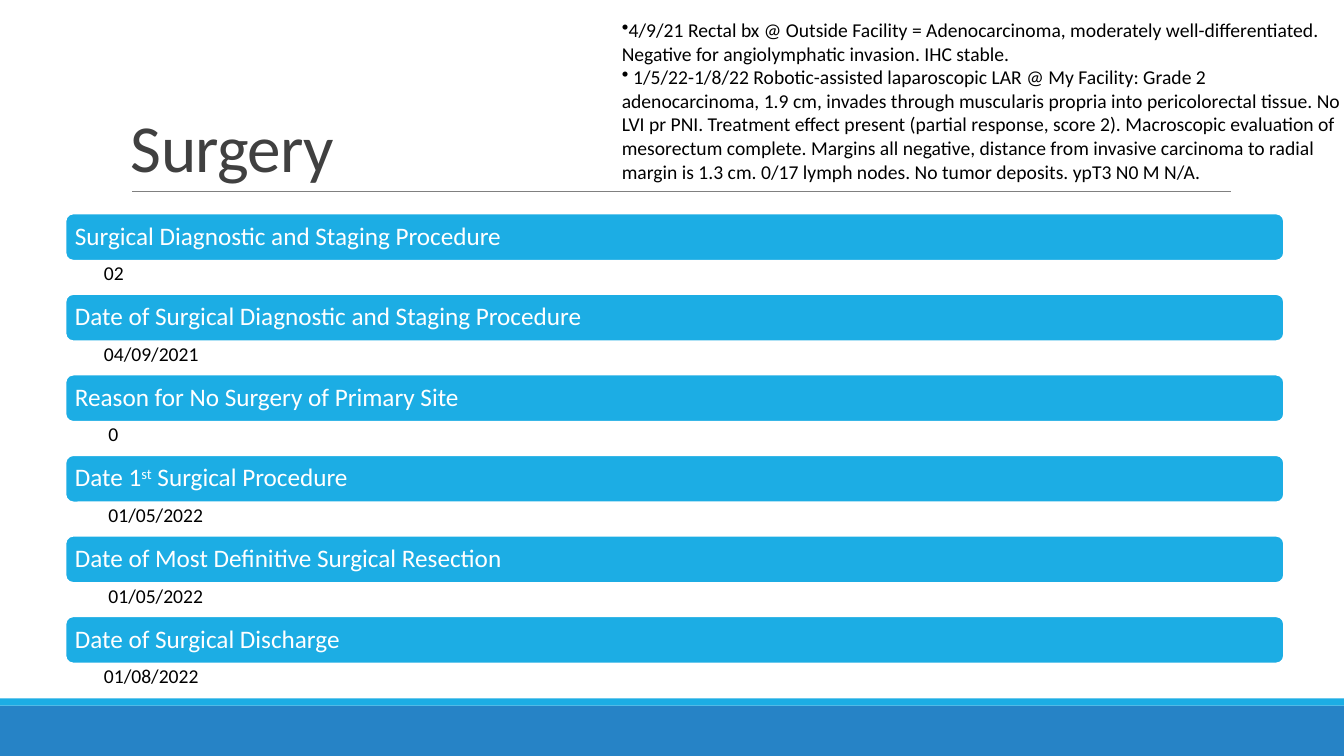
from pptx import Presentation
from pptx.dml.color import RGBColor
from pptx.enum.shapes import MSO_CONNECTOR as Connector, MSO_SHAPE as Preset
from pptx.enum.text import MSO_ANCHOR as Anchor, MSO_AUTO_SIZE as AutoSize, PP_ALIGN as Align
from pptx.oxml.ns import qn
from pptx.util import Cm, Pt
from lxml.etree import SubElement

SKY, BLUE, WHITE, BLACK = "1CADE4", "2683C6", "FFFFFF", "000000"
DARK_GREY, RULE_GREY = "404040", "808080"

# Each entry: heading, value; a heading in pieces alternates normal and superscript
FIELDS = [
    (["Surgical Diagnostic and Staging Procedure"], "02"),
    (["Date of Surgical Diagnostic and Staging Procedure"], "04/09/2021"),
    (["Reason for No Surgery of Primary Site"], " 0"),
    (["Date 1", "st", " Surgical Procedure"], " 01/05/2022"),
    (["Date of Most Definitive Surgical Resection"], " 01/05/2022"),
    (["Date of Surgical Discharge"], "01/08/2022"),
]
FINDINGS = [
    "4/9/21 Rectal bx @ Outside Facility = Adenocarcinoma, moderately well-differentiated. "
    "Negative for angiolymphatic invasion. IHC stable.",
    " 1/5/22-1/8/22 Robotic-assisted laparoscopic LAR @ My Facility: Grade 2 adenocarcinoma, "
    "1.9 cm, invades through muscularis propria into pericolorectal tissue. No LVI pr PNI. "
    "Treatment effect present (partial response, score 2). Macroscopic evaluation of mesorectum "
    "complete. Margins all negative, distance from invasive carcinoma to radial margin is 1.3 cm. "
    "0/17 lymph nodes. No tumor deposits. ypT3 N0 M N/A.",
]

FIELD_LEFT, FIELD_TOP, FIELD_WIDTH = 1.65, 5.38, 30.71
BAR_HEIGHT, VALUE_HEIGHT = 1.19, 0.84
FIELD_PITCH = BAR_HEIGHT + VALUE_HEIGHT


def rgb(hex_colour):
    return RGBColor.from_string(hex_colour)


def apply(target, formats):
    for attribute, value in formats.items():
        setattr(target, attribute, value)


def set_frame(frame, margins=(0.25, 0.13, 0.25, 0.13), anchor=Anchor.TOP):
    left, top, right, bottom = map(Cm, margins)
    apply(frame, {
        "word_wrap": True, "auto_size": AutoSize.NONE, "vertical_anchor": anchor,
        "margin_left": left, "margin_top": top,
        "margin_right": right, "margin_bottom": bottom,
    })


def add_text(paragraph, text, size, colour):
    run = paragraph.add_run()
    run.text = text
    apply(run.font, {"name": "Calibri", "size": Pt(size)})
    run.font.color.rgb = rgb(colour)
    return run


def add_block(slide, preset, box, fill, outline=None):
    block = slide.shapes.add_shape(preset, *map(Cm, box))
    block.shadow.inherit = False
    block.fill.solid()
    block.fill.fore_color.rgb = rgb(fill)
    if outline:
        block.line.color.rgb = rgb(outline)
        block.line.width = Pt(1.25)
    else:
        block.line.fill.background()
    return block


def add_rule(slide, left, right, height):
    rule = slide.shapes.add_connector(
        Connector.STRAIGHT, Cm(left), Cm(height), Cm(right), Cm(height))
    rule.line.color.rgb = rgb(RULE_GREY)
    rule.line.width = Pt(0.5)
    SubElement(rule._element.spPr, qn("a:effectLst"))


def set_title(slide, text):
    title = slide.shapes.title
    apply(title, {"left": Cm(3.05), "top": Cm(0.79), "width": Cm(27.94), "height": Cm(4.04)})
    set_frame(title.text_frame, anchor=Anchor.BOTTOM)
    paragraph = title.text_frame.paragraphs[0]
    apply(paragraph, {"alignment": Align.LEFT, "line_spacing": 0.85})
    run = add_text(paragraph, text, 48, DARK_GREY)
    run._r.get_or_add_rPr().set("spc", "-50")


def add_field(slide, top, heading, value):
    # Heading bar
    bar = add_block(slide, Preset.ROUNDED_RECTANGLE,
                    (FIELD_LEFT, top, FIELD_WIDTH, BAR_HEIGHT), SKY, WHITE)
    set_frame(bar.text_frame, (0.18, 0.18, 0.18, 0.18), Anchor.MIDDLE)
    paragraph = bar.text_frame.paragraphs[0]
    apply(paragraph, {"alignment": Align.LEFT, "line_spacing": 0.9})
    for index, piece in enumerate(heading):
        run = add_text(paragraph, piece, 18, WHITE)
        if index % 2:
            run._r.get_or_add_rPr().set("baseline", "30000")

    # Value below the bar
    entry = slide.shapes.add_textbox(
        *map(Cm, (FIELD_LEFT, top + BAR_HEIGHT, FIELD_WIDTH, VALUE_HEIGHT)))
    set_frame(entry.text_frame, (0.97, 0.08, 0.36, 0.08))
    paragraph = entry.text_frame.paragraphs[0]
    paragraph.line_spacing = 0.9
    add_text(paragraph, value, 14, BLACK)


def add_findings(slide, findings):
    notes = slide.shapes.add_textbox(Cm(15.42), Cm(0.33), Cm(18.72), Cm(4.45))
    frame = notes.text_frame
    set_frame(frame)
    for index, finding in enumerate(findings):
        paragraph = frame.add_paragraph() if index else frame.paragraphs[0]
        SubElement(paragraph._p.get_or_add_pPr(), qn("a:buChar")).set("char", "•")
        add_text(paragraph, finding, 14, BLACK)


def main():
    deck = Presentation()
    apply(deck, {"slide_width": Cm(33.87), "slide_height": Cm(19.05)})
    slide = deck.slides.add_slide(deck.slide_layouts[5])

    # Footer bands and title
    add_block(slide, Preset.RECTANGLE, (0, 17.78, 33.87, 1.27), BLUE)
    add_block(slide, Preset.RECTANGLE, (0, 17.6, 33.87, 0.18), SKY)
    add_rule(slide, 3.33, 31.01, 4.83)
    set_title(slide, "Surgery")

    # Surgery fields
    for row, (heading, value) in enumerate(FIELDS):
        add_field(slide, FIELD_TOP + row * FIELD_PITCH, heading, value)

    # Pathology findings
    add_findings(slide, FINDINGS)
    deck.save("out.pptx")


if __name__ == "__main__":
    main()
